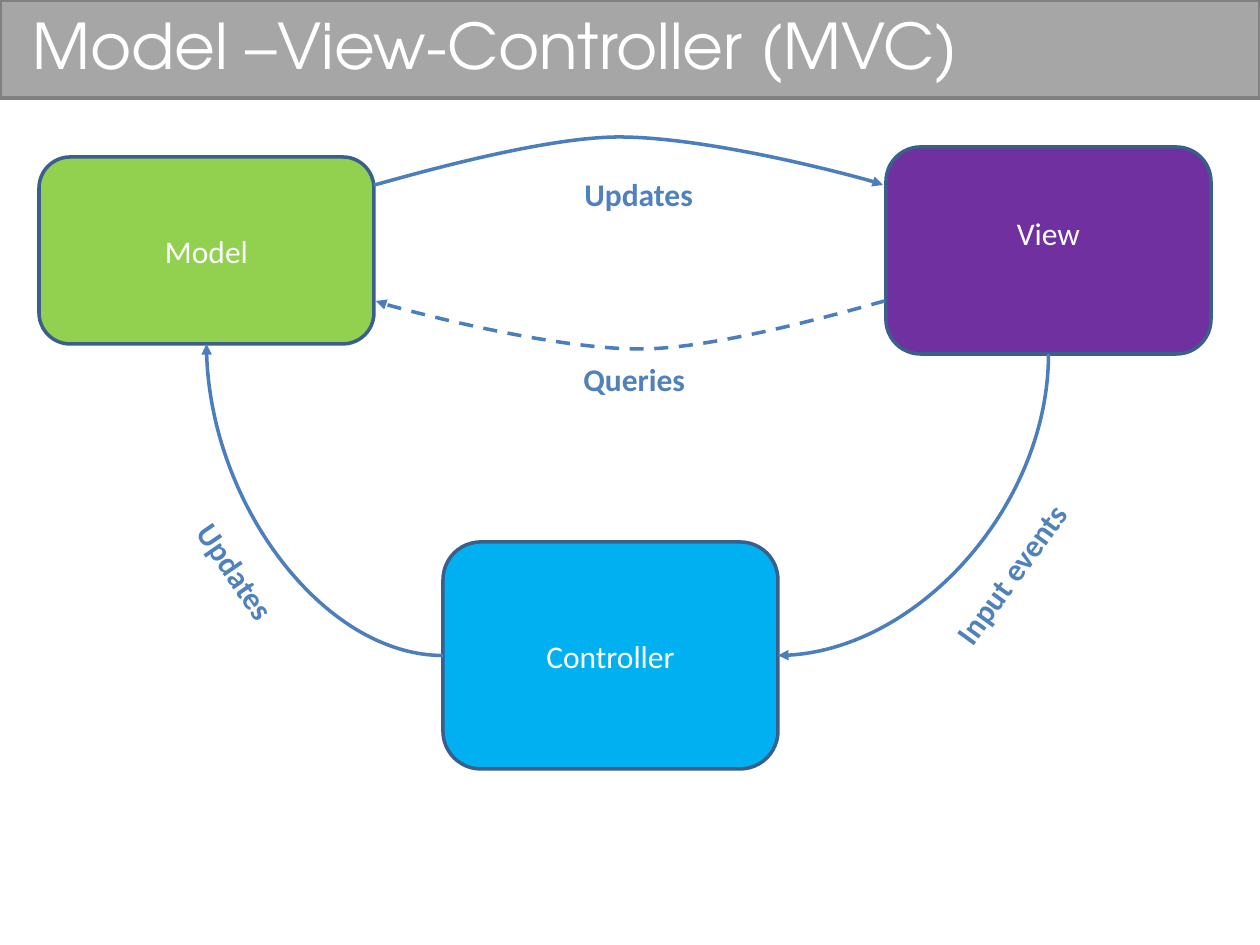
from dataclasses import dataclass

from lxml.etree import SubElement
from pptx import Presentation
from pptx.dml.color import RGBColor
from pptx.enum.dml import MSO_LINE
from pptx.enum.shapes import MSO_CONNECTOR, MSO_SHAPE
from pptx.enum.text import MSO_ANCHOR, MSO_AUTO_SIZE, PP_ALIGN
from pptx.oxml.ns import qn
from pptx.util import Emu, Inches, Pt

EMU_PER_PX = 914400 / 126


@dataclass(frozen=True)
class Theme:
    """Colours, fonts and sizes of the slide."""
    bar: str = "A6A6A6"
    bar_line: str = "808080"
    model: str = "92D050"
    view: str = "7030A0"
    controller: str = "00B0F0"
    node_line: str = "3A5F8C"
    arrow: str = "4B7EBC"
    label: str = "4F81BD"
    white: str = "FFFFFF"
    title_font: str = "TeX Gyre Adventor"
    body_font: str = "Calibri"
    title_size: int = 36
    body_size: int = 18
    line_width: int = 2


T = Theme()


def px(n):
    """Turn pixels into EMU."""
    return Emu(round(n * EMU_PER_PX))


def place(box, x, y, w, h):
    """Return the EMU rectangle of a part inside a box."""
    return px(box[0] + x), px(box[1] + y), px(w), px(h)


def style_text(tf, color, size=T.body_size, font=T.body_font, bold=False, align=PP_ALIGN.LEFT):
    """Format every run of a text frame."""
    for p in tf.paragraphs:
        p.alignment = align
        for r in p.runs:
            r.font.name, r.font.size, r.font.bold = font, Pt(size), bold
            r.font.color.rgb = RGBColor.from_string(color)


def style_line(line, color):
    """Set the colour and width of a line."""
    line.color.rgb = RGBColor.from_string(color)
    line.width = Pt(T.line_width)


def add_block(s, kind, rect, fill, line):
    """Add a filled and outlined shape."""
    sp = s.shapes.add_shape(kind, *rect)
    sp.shadow.inherit = False
    sp.fill.solid()
    sp.fill.fore_color.rgb = RGBColor.from_string(fill)
    style_line(sp.line, line)
    return sp


def add_arrowhead(line_shape):
    """Put a triangle at the end of a line."""
    ln = line_shape.line._get_or_add_ln()
    SubElement(ln, qn("a:tailEnd"), type="triangle")


def add_header(s, box, text):
    """Draw the title bar with the title placeholder on top."""
    bar = add_block(s, MSO_SHAPE.RECTANGLE, place(box, 0, 0, box[2], box[3]), T.bar, T.bar_line)
    title = s.shapes.title
    title.element.addprevious(bar.element)
    title.left, title.top, title.width, title.height = place(box, 20, 0, 1200, 88)
    tf = title.text_frame
    tf.text = text
    tf.auto_size = MSO_AUTO_SIZE.NONE
    tf.vertical_anchor = MSO_ANCHOR.MIDDLE
    style_text(tf, T.white, T.title_size, T.title_font)


def add_node(s, rect, text, fill, raise_by=0):
    """Add a rounded box with its name, optionally raised from the centre."""
    sp = add_block(s, MSO_SHAPE.ROUNDED_RECTANGLE, rect, fill, T.node_line)
    tf = sp.text_frame
    tf.text = text
    tf.vertical_anchor = MSO_ANCHOR.MIDDLE
    tf.margin_bottom = Inches(0.05) + px(2 * raise_by)
    style_text(tf, T.white, align=PP_ALIGN.CENTER)
    return sp


def add_bend(s, start, start_side, end, end_side, rot):
    """Join two nodes with a quarter-turn curved arrow."""
    c = s.shapes.add_connector(MSO_CONNECTOR.CURVE, 0, 0, 0, 0)
    c.begin_connect(start, start_side)
    c.end_connect(end, end_side)
    cx, cy = (c.begin_x + c.end_x) // 2, (c.begin_y + c.end_y) // 2
    w, h = abs(c.end_x - c.begin_x), abs(c.end_y - c.begin_y)
    if rot % 180:
        w, h = h, w
    c.left, c.top, c.width, c.height = cx - w // 2, cy - h // 2, w, h
    spPr = c.element.spPr
    xfrm = spPr.find(qn("a:xfrm"))
    for flip in ("flipH", "flipV"):
        xfrm.attrib.pop(flip, None)
    xfrm.set("rot", str(rot * 60000))
    spPr.find(qn("a:prstGeom")).set("prst", "curvedConnector2")
    style_line(c.line, T.arrow)
    add_arrowhead(c)
    SubElement(spPr, qn("a:effectLst"))


def add_arc(s, box, points, dash=None):
    """Draw an arrow along cubic curves given as a start and control triples."""
    points = [(box[0] + x, box[1] + y) for x, y in points]
    fb = s.shapes.build_freeform(*points[0], scale=EMU_PER_PX)
    fb.add_line_segments(points[1:], close=False)
    sp = fb.convert_to_shape()
    path = next(sp.element.iter(qn("a:path")))
    segments = path.findall(qn("a:lnTo"))
    for i in range(0, len(segments), 3):
        curve = SubElement(path, qn("a:cubicBezTo"))
        for seg in segments[i:i + 3]:
            curve.append(seg[0])
            path.remove(seg)
    sp.shadow.inherit = False
    sp.fill.background()
    style_line(sp.line, T.arrow)
    if dash:
        sp.line.dash_style = dash
    add_arrowhead(sp)


def add_label(s, rect, text, rot=0):
    """Add a bold arrow label."""
    tb = s.shapes.add_textbox(*rect)
    tb.rotation = rot
    tf = tb.text_frame
    tf.text = text
    tf.word_wrap = False
    tf.auto_size = MSO_AUTO_SIZE.SHAPE_TO_FIT_TEXT
    style_text(tf, T.label, bold=True)


def add_diagram(s, box):
    """Draw the three nodes, their arrows and the labels."""
    model = add_node(s, place(box, 39, 57, 335, 187), "Model", T.model)
    view = add_node(s, place(box, 886, 47, 325, 207), "View", T.view, raise_by=18)
    controller = add_node(s, place(box, 443, 442, 335, 227), "Controller", T.controller)
    add_bend(s, view, 2, controller, 3, 90)
    add_bend(s, controller, 1, model, 2, 180)

    arc = [(374, 85), (377, 85), (534, 37), (619, 37), (704, 37), (885, 83), (883, 85)]
    add_arc(s, box, arc)
    add_arc(s, box, [(1259 - x, 286 - y) for x, y in arc], MSO_LINE.DASH)

    for text, x, y, w, rot in (
        ("Input events", 916, 448, 190, 306),
        ("Updates", 169, 447, 135, 55.6),
        ("Queries", 571, 254, 127, 0),
        ("Updates", 572, 69, 135, 0),
    ):
        add_label(s, place(box, x, y, w, 50), text, rot)


def main():
    """Build and save the slide."""
    prs = Presentation()
    prs.slide_width, prs.slide_height = px(1260), px(945)
    s = prs.slides.add_slide(prs.slide_layouts[5])
    add_header(s, (0, 0, 1260, 98), "Model –View-Controller (MVC)")
    add_diagram(s, (0, 100, 1260, 845))
    prs.save("out.pptx")


if __name__ == "__main__":
    main()
